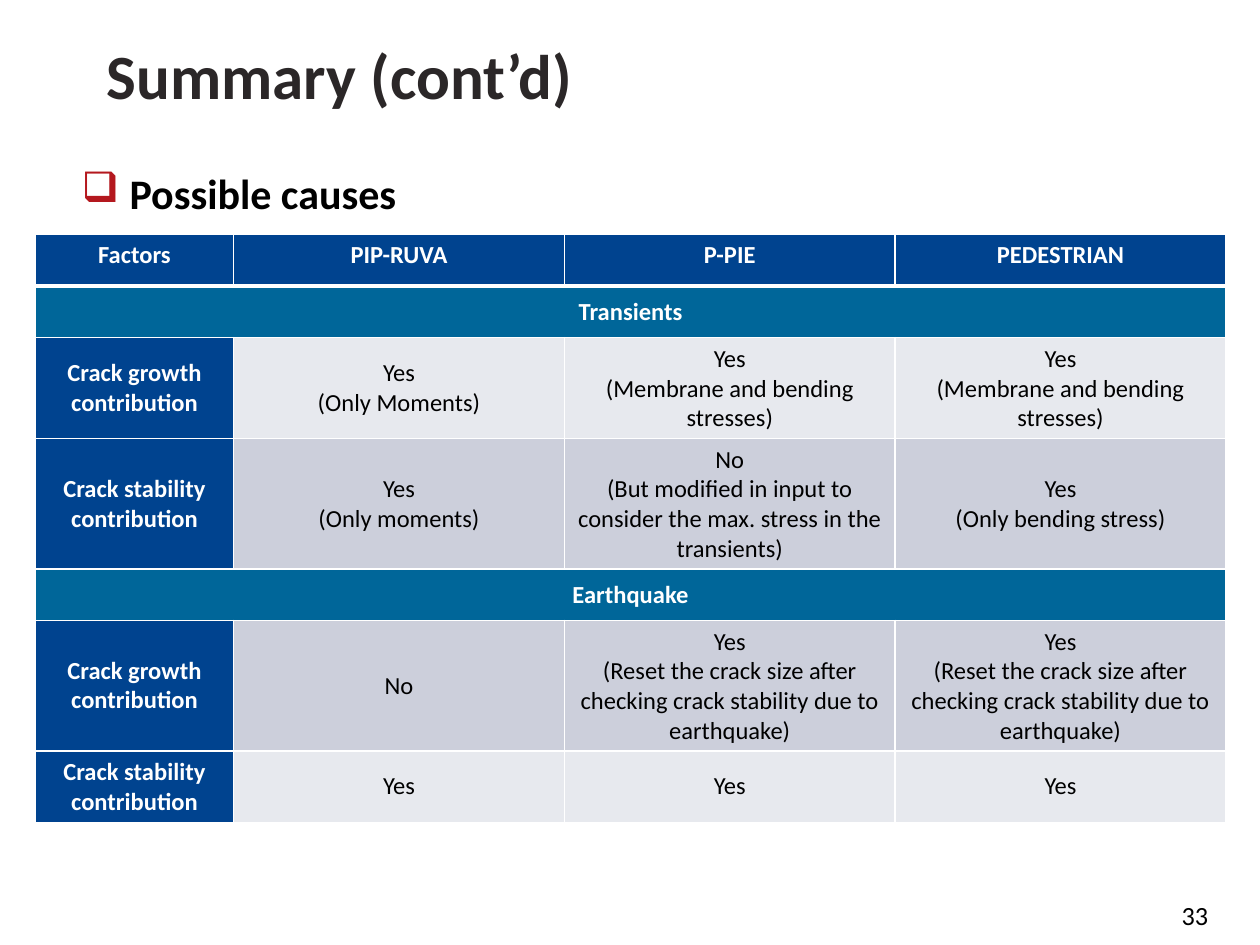
import pptx
import pptx.dml.color
import pptx.enum.text
import pptx.oxml
import pptx.oxml.ns
import pptx.util

FONT = "Calibri"
NAVY, TEAL, WHITE, BLACK = "00438F", "006699", "FFFFFF", "000000"
LIGHT, DARK = "E7E9EE", "CCCFDB"
MIDDLE = pptx.enum.text.MSO_ANCHOR.MIDDLE
TOP = pptx.enum.text.MSO_ANCHOR.TOP
CENTER = pptx.enum.text.PP_ALIGN.CENTER

HEADINGS = ["Factors", "PIP-RUVA", "P-PIE", "PEDESTRIAN"]
GROWTH = "Crack growth contribution"
STABILITY = "Crack stability contribution"
STRESSES = "Yes\n(Membrane and bending stresses)"
RESET = "Yes\n(Reset the crack size after checking crack stability due to earthquake)"
# Each body row: its texts and the fill of its value cells (a lone text is a section band).
BODY_ROWS = [
    (["Transients"], TEAL),
    ([GROWTH, "Yes\n(Only Moments)", STRESSES, STRESSES], LIGHT),
    ([STABILITY, "Yes\n(Only moments)",
      "No\n(But modified in input to consider the max. stress in the transients)",
      "Yes\n(Only bending stress)"], DARK),
    (["Earthquake"], TEAL),
    ([GROWTH, "No", RESET, RESET], DARK),
    ([STABILITY, "Yes", "Yes", "Yes"], LIGHT),
]


def color(value):
    return pptx.dml.color.RGBColor.from_string(value)


def inches(*lengths):
    return [pptx.util.Inches(length) for length in lengths]


def write(paragraph, text, size, ink, bold=False):
    paragraph.text = text
    for span in paragraph.runs:
        span.font.name = FONT
        span.font.size = pptx.util.Pt(size)
        span.font.bold = bold
        span.font.color.rgb = color(ink)


def add_text(page, area, text, size, ink, bold=False, anchor=TOP):
    box = page.shapes.add_textbox(*inches(*area))
    box.text_frame.word_wrap = True
    box.text_frame.vertical_anchor = anchor
    paragraph = box.text_frame.paragraphs[0]
    write(paragraph, text, size, ink, bold)
    return paragraph


def add_bullet(paragraph, symbol, ink, indent):
    properties = paragraph._p.get_or_add_pPr()
    width = pptx.util.Inches(indent)
    properties.set("marL", str(width))
    properties.set("indent", str(-width))
    namespace = pptx.oxml.ns.nsdecls("a")
    for markup in (f'<a:buClr {namespace}><a:srgbClr val="{ink}"/></a:buClr>',
                   f'<a:buChar {namespace} char="{symbol}"/>'):
        properties.append(pptx.oxml.parse_xml(markup))


def set_borders(cell, top, bottom):
    properties = cell._tc.get_or_add_tcPr()
    for side, points in (("L", 1), ("R", 1), ("T", top), ("B", bottom)):
        properties.append(pptx.oxml.parse_xml(
            f'<a:ln{side} {pptx.oxml.ns.nsdecls("a")} w="{pptx.util.Pt(points)}">'
            f'<a:solidFill><a:srgbClr val="{WHITE}"/></a:solidFill></a:ln{side}>'))


def add_causes_table(page, area):
    left, top, width, height = area
    rows = [(HEADINGS, NAVY)] + BODY_ROWS
    frame = page.shapes.add_table(len(rows), len(HEADINGS), *inches(*area))
    table = frame.table
    label_width = width / 6
    value_width = (width - label_width) / 3
    for index, column in enumerate(table.columns):
        column.width = pptx.util.Inches(value_width if index else label_width)
    for r, (texts, fill) in enumerate(rows):
        table.rows[r].height = pptx.util.Inches(0.41)
        is_band = len(texts) == 1
        if is_band:
            table.cell(r, 0).merge(table.cell(r, len(HEADINGS) - 1))
        for c in range(len(HEADINGS)):
            cell = table.cell(r, c)
            set_borders(cell, 3 if r == 1 else 1, 3 if r == 0 else 1)
            is_value = r > 0 and c > 0 and not is_band
            cell.fill.solid()
            cell.fill.fore_color.rgb = color(fill if is_value or is_band else NAVY)
            cell.vertical_anchor = MIDDLE if r else TOP
            if c < len(texts):
                paragraph = cell.text_frame.paragraphs[0]
                paragraph.alignment = CENTER
                write(paragraph, texts[c], 14, BLACK if is_value else WHITE, not is_value)
    # Rows grow with their text beyond the minimum height.
    frame.height = pptx.util.Inches(height)


def build_slide(deck):
    page = deck.slides.add_slide(deck.slide_layouts[6])
    add_text(page, (0.75, 0.13, 8.71, 0.92), "Summary (cont’d)", 36, "2B2728", True, MIDDLE)
    causes = add_text(page, (0.55, 1.28, 8.88, 6.21), "Possible causes", 24, BLACK, True)
    add_bullet(causes, "❑", "B4181E", 0.38)
    add_text(page, (9.28, 7.09, 0.68, 0.4), "33", 15, BLACK)
    add_causes_table(page, (0.28, 1.86, 9.45, 4.65))


def main():
    deck = pptx.Presentation()
    deck.slide_width, deck.slide_height = inches(10, 7.5)
    build_slide(deck)
    deck.save("out.pptx")


if __name__ == "__main__":
    main()
